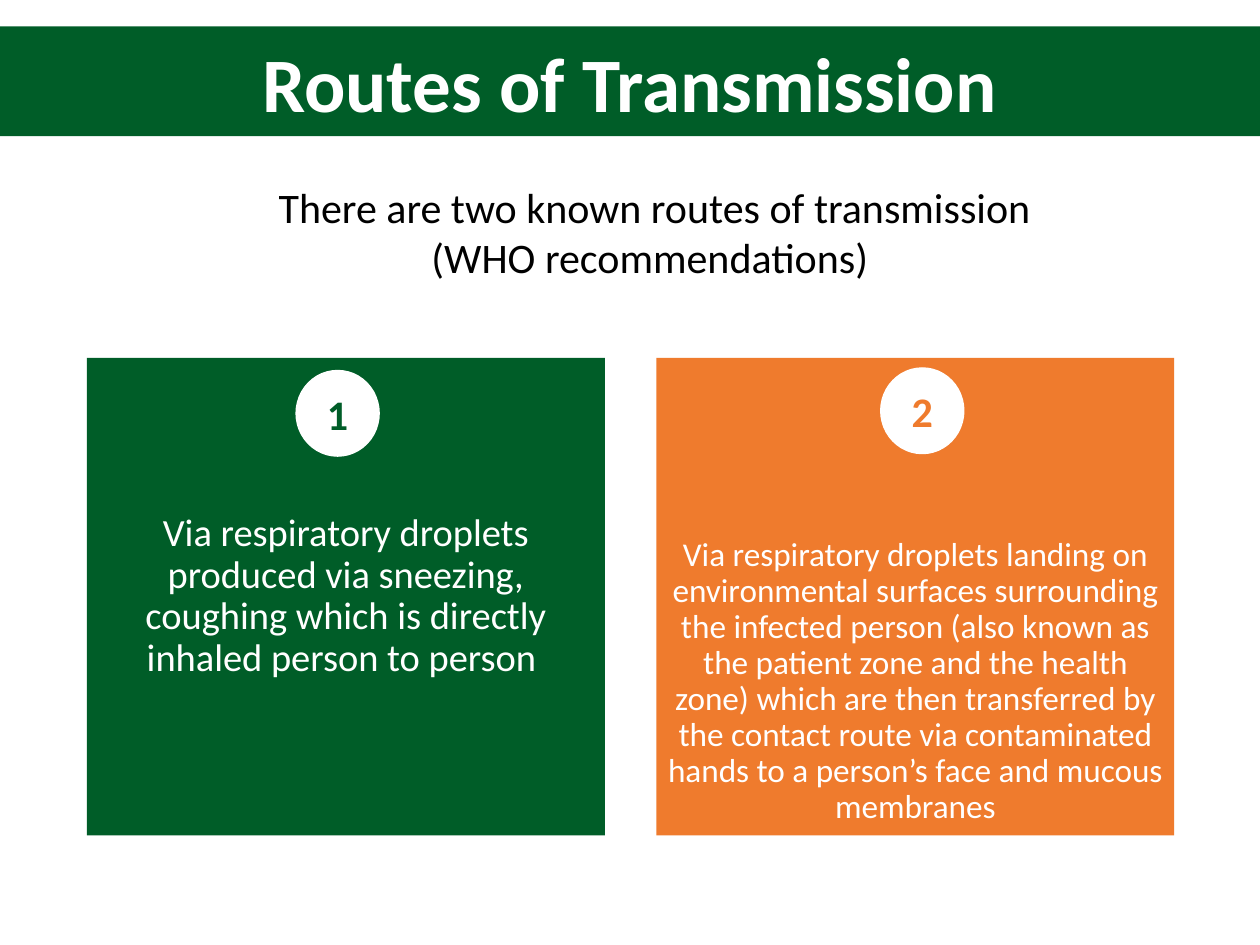
"""Build the slide on the two routes of transmission."""
from dataclasses import dataclass

from pptx import Presentation
from pptx.dml.color import RGBColor
from pptx.enum.shapes import MSO_SHAPE
from pptx.enum.text import MSO_ANCHOR, MSO_AUTO_SIZE, PP_ALIGN
from pptx.util import Inches, Pt


@dataclass(frozen=True)
class Theme:
    """Colours, font and type sizes of the slide."""
    font: str = "Calibri"
    green: str = "005D28"
    orange: str = "EF7B2D"
    white: str = "FFFFFF"
    black: str = "000000"
    title: int = 44
    lead: int = 24
    direct: int = 22
    surface: int = 19


class SlideBuilder:
    """Hold the theme and the current slide, and add its elements."""

    def __init__(self, slide, theme):
        """Keep the slide and the theme."""
        self.slide = slide
        self.theme = theme

    def assign(self, target, values):
        """Set each named attribute on the target."""
        for name, value in values.items():
            setattr(target, name, value)

    def place(self, element, box):
        """Move and size an element in inches."""
        sides = map(Inches, box)
        self.assign(element, dict(zip(("left", "top", "width", "height"), sides)))

    def set_text(self, element, text, size, color, bold=False, anchor=MSO_ANCHOR.MIDDLE,
                 inset=None, spacing=None):
        """Put centred text in an element."""
        frame = element.text_frame
        frame.text = text
        self.assign(frame, {"word_wrap": True, "auto_size": MSO_AUTO_SIZE.NONE,
                            "vertical_anchor": anchor})
        if inset is not None:
            margins = ("margin_left", "margin_top", "margin_right", "margin_bottom")
            self.assign(frame, dict.fromkeys(margins, Inches(inset)))
        paragraph = frame.paragraphs[0]
        self.assign(paragraph, {"alignment": PP_ALIGN.CENTER, "line_spacing": spacing})
        font = paragraph.runs[0].font
        self.assign(font, {"name": self.theme.font, "size": Pt(size), "bold": bold})
        font.color.rgb = RGBColor.from_string(color)

    def paint(self, element, color):
        """Give an element a solid fill."""
        element.fill.solid()
        element.fill.fore_color.rgb = RGBColor.from_string(color)

    def title(self, text, box):
        """Format the title placeholder as a full-width band."""
        band = self.slide.shapes.title
        self.place(band, box)
        self.paint(band, self.theme.green)
        self.set_text(band, text, self.theme.title, self.theme.white, bold=True)

    def lead(self, text, box):
        """Add the introductory sentence."""
        sentence = self.slide.shapes.add_textbox(*map(Inches, box))
        self.set_text(sentence, text, self.theme.lead, self.theme.black,
                      anchor=MSO_ANCHOR.TOP)

    def shape(self, preset, box, color):
        """Add a flat filled shape."""
        figure = self.slide.shapes.add_shape(preset, *map(Inches, box))
        figure.shadow.inherit = False
        self.paint(figure, color)
        return figure

    def card(self, text, box, color, size, anchor, inset):
        """Add a coloured card that describes a route."""
        panel = self.shape(MSO_SHAPE.RECTANGLE, box, color)
        panel.line.fill.background()
        self.set_text(panel, text, size, self.theme.white, anchor=anchor,
                      inset=inset, spacing=0.9)

    def badge(self, number, box, color):
        """Add the round number of a route."""
        disc = self.shape(MSO_SHAPE.OVAL, box, self.theme.white)
        disc.line.color.rgb = RGBColor.from_string(self.theme.white)
        disc.line.width = Pt(0.75)
        self.set_text(disc, str(number), self.theme.lead, color, bold=True)


def main():
    """Create the presentation and save it."""
    theme = Theme()
    presentation = Presentation()
    presentation.slide_width = Inches(10)
    presentation.slide_height = Inches(7.5)
    slide = presentation.slides.add_slide(presentation.slide_layouts[5])
    builder = SlideBuilder(slide, theme)

    builder.title("Routes of Transmission", (0, 0.21, 10, 0.87))
    builder.lead("There are two known routes of transmission (WHO recommendations) ",
                 (1.85, 1.39, 6.69, 0.91))

    routes = (
        ("Via respiratory droplets produced via sneezing, coughing which is directly "
         "inhaled person to person ",
         theme.green, theme.direct, MSO_ANCHOR.MIDDLE, 0.09, (2.35, 2.94)),
        ("Via respiratory droplets landing on environmental surfaces surrounding the "
         "infected person (also known as the patient zone and the health zone) which are "
         "then transferred by the contact route via contaminated hands to a person’s face "
         "and mucous membranes",
         theme.orange, theme.surface, MSO_ANCHOR.BOTTOM, 0.08, (6.99, 2.92)),
    )
    card_left, card_pitch = 0.69, 4.52
    for index, (text, color, size, anchor, inset, corner) in enumerate(routes):
        box = (card_left + index * card_pitch, 2.84, 4.11, 3.79)
        builder.card(text, box, color, size, anchor, inset)
        builder.badge(index + 1, (*corner, 0.66, 0.68), color)

    presentation.save("out.pptx")


if __name__ == "__main__":
    main()
